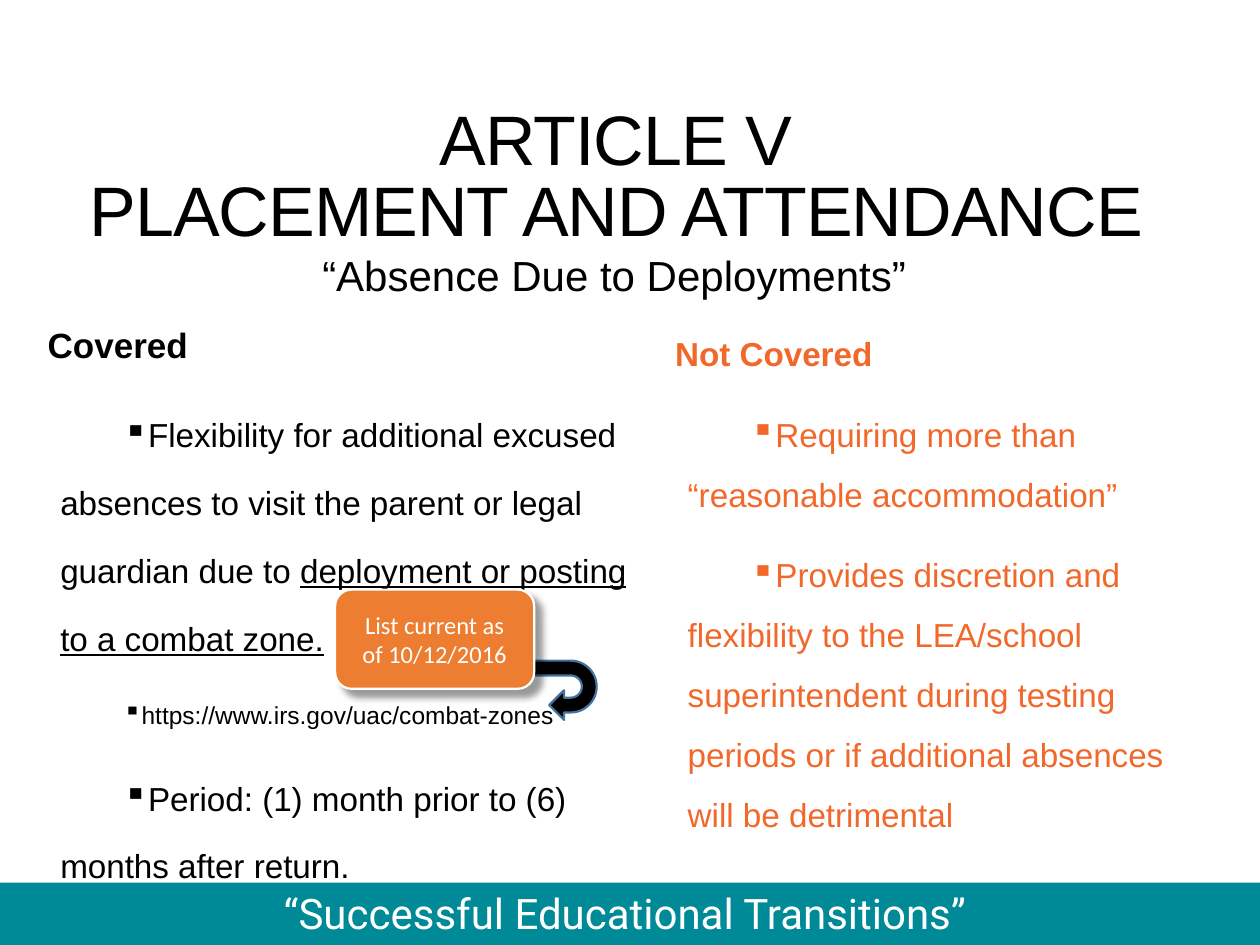
from lxml.etree import SubElement as Sub
from pptx import Presentation
from pptx.dml.color import RGBColor as Rgb
from pptx.enum.shapes import MSO_SHAPE as Shape
from pptx.enum.text import MSO_ANCHOR as Anchor, MSO_AUTO_SIZE as Auto, PP_ALIGN as Align
from pptx.oxml.ns import qn
from pptx.util import Inches, Pt

WIDE, HIGH = 10, 7.5
HUES = {"ink": "000000", "white": "FFFFFF", "teal": "008996",
        "rust": "F2682B", "amber": "ED7D31", "blue": "43739E"}
COVER = [
    [("Flexibility for additional excused absences to visit the parent or legal "
      "guardian due to ", 19, {}),
     ("deployment or posting to a combat zone.", 19, {"underline": True})],
    [("https://www.irs.gov/uac/combat-zones", 14, {})],
    [("Period: (1) month prior to (6) months after return.", 19, {})],
]
OMIT = [
    [("Requiring more than “reasonable accommodation”", 19, {})],
    [("Provides discretion and flexibility to the LEA/school superintendent during "
      "testing periods or if additional absences will be detrimental", 19, {})],
]


def hue(name):
    return Rgb.from_string(HUES[name])


def place(x, y, w, h):
    """Turn shares of the slide's size into lengths."""
    return [Inches(part * side) for part, side in zip((x, y, w, h), (WIDE, HIGH) * 2)]


def apply(item, form):
    for key, value in form.items():
        setattr(item, key, value)


def add_run(para, text, size, color, face="Arial", **form):
    run = para.add_run()
    run.text = text
    apply(run.font, {"size": Pt(size), "name": face, **form})
    run.font.color.rgb = hue(color)
    return run


def add_box(slide, spot, **form):
    frame = slide.shapes.add_textbox(*place(*spot)).text_frame
    apply(frame, {"word_wrap": True, **form})
    return frame


def add_line(slide, spot, text, align, color, face):
    """Add a one-line caption."""
    para = add_box(slide, spot, auto_size=Auto.SHAPE_TO_FIT_TEXT).paragraphs[0]
    para.alignment = align
    add_run(para, text, 24, color, face)


def add_shape(slide, kind, spot, fill, edge=None):
    shape = slide.shapes.add_shape(kind, *place(*spot))
    shape.shadow.inherit = False
    shape.fill.solid()
    shape.fill.fore_color.rgb = hue(fill)
    if edge:
        shape.line.color.rgb = hue(edge)
        shape.line.width = Pt(1.25)
    else:
        shape.line.fill.background()
    return shape


def add_list(slide, spot, head, size, color, gap, items):
    """Add a bold heading with bulleted items below it."""
    frame = add_box(slide, spot)
    para = frame.paragraphs[0]
    apply(para, {"line_spacing": gap, "space_after": Pt(6)})
    add_run(para, head, size, color, bold=True)
    for item in items:
        para = frame.add_paragraph()
        props = para._p.get_or_add_pPr()
        props.set("marL", str(Inches(0.1)))
        props.set("indent", str(Inches(0.5)))
        Sub(props, qn("a:buChar"), char="▪")
        apply(para, {"line_spacing": gap, "space_before": Pt(6), "space_after": Pt(6)})
        for text, points, form in item:
            add_run(para, text, points, color, **form)


def set_title(title):
    spot = place(0.05, 0.17, 0.878, 0.113)
    apply(title, dict(zip(("left", "top", "width", "height"), spot)))
    frame = title.text_frame
    apply(frame, {"auto_size": Auto.NONE, "word_wrap": True,
                  "vertical_anchor": Anchor.MIDDLE, "margin_bottom": Inches(0.6)})
    for num, text in enumerate(("ARTICLE V", "PLACEMENT AND ATTENDANCE")):
        para = frame.add_paragraph() if num else frame.paragraphs[0]
        apply(para, {"alignment": Align.CENTER, "line_spacing": 0.85,
                     "space_before": Pt(0)})
        run = add_run(para, text, 40, "ink")
        run.font._element.set("spc", "-50")


def add_turn(slide):
    turn = add_shape(slide, Shape.U_TURN_ARROW, (0.425, 0.697, 0.047, 0.067), "ink", "blue")
    turn.rotation = 270
    frame = turn._element.spPr.find(qn("a:xfrm"))
    for flip in ("flipH", "flipV"):
        frame.set(flip, "1")


def add_note(slide):
    note = add_shape(slide, Shape.ROUNDED_RECTANGLE, (0.266, 0.624, 0.158, 0.105),
                     "amber", "white")
    glow = note._element.spPr.find(qn("a:effectLst"))
    cast = Sub(glow, qn("a:outerShdw"), blurRad=str(Pt(4)), dist=str(Pt(6)),
               dir="2700000", algn="tl", rotWithShape="0")
    tint = Sub(cast, qn("a:srgbClr"), val=HUES["ink"])
    Sub(tint, qn("a:alpha"), val="40000")
    apply(note.text_frame, {"word_wrap": True, "vertical_anchor": Anchor.MIDDLE})
    para = note.text_frame.paragraphs[0]
    para.alignment = Align.CENTER
    add_run(para, "List current as of 10/12/2016", 14, "white", "Calibri")


def main():
    deck = Presentation()
    apply(deck, {"slide_width": Inches(WIDE), "slide_height": Inches(HIGH)})
    slide = deck.slides.add_slide(deck.slide_layouts[5])
    set_title(slide.shapes.title)
    add_shape(slide, Shape.RECTANGLE, (0, 0.934, 1, 0.066), "teal")
    add_line(slide, (0.175, 0.933, 0.642, 0.067),
             "“Successful Educational Transitions”", Align.CENTER, "white", "Roboto")
    add_list(slide, (0.028, 0.305, 0.498, 0.69), "Covered", 20, "ink", 1.7, COVER)
    add_list(slide, (0.526, 0.325, 0.442, 0.564), "Not Covered", 19, "rust", 1.5, OMIT)
    add_line(slide, (0.246, 0.257, 0.487, 0.067),
             "“Absence Due to Deployments”", Align.LEFT, "ink", "Arial")
    add_turn(slide)
    add_note(slide)
    deck.save("out.pptx")


if __name__ == "__main__":
    main()
